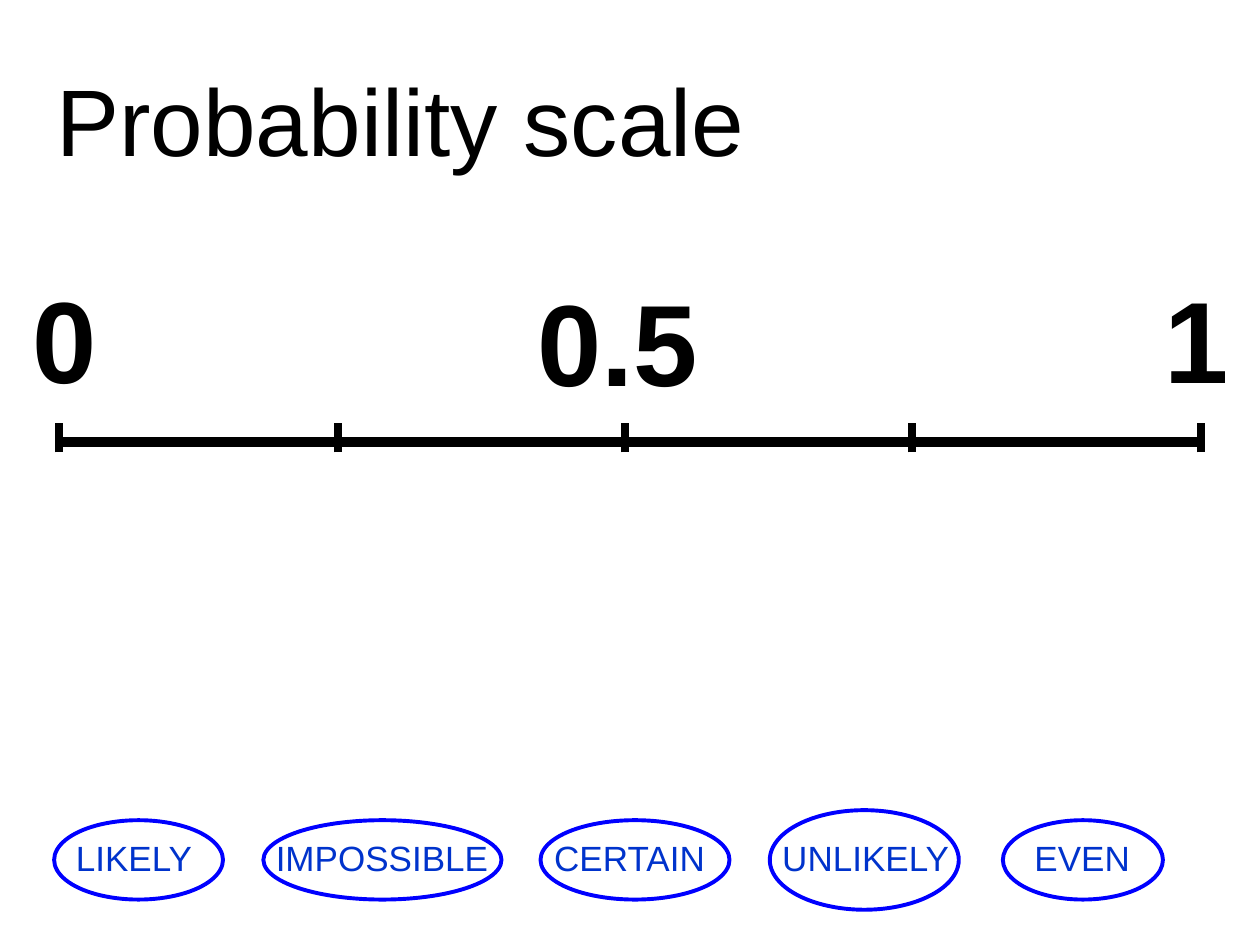
import pptx
import pptx.util
import pptx.dml.color
import pptx.enum.shapes
import pptx.enum.text
import pptx.oxml.ns
from lxml import etree

COLOURS = {"ink": "000000", "word": "0033CC", "ring": "0000FF"}
COLUMNS, ROWS = 100, 75


class SlideBuilder:
    font = "Arial"

    def __init__(self, presentation):
        self.slide = presentation.slides.add_slide(presentation.slide_layouts[6])
        self.column = presentation.slide_width / COLUMNS
        self.row = presentation.slide_height / ROWS

    def x(self, columns):
        return pptx.util.Emu(round(columns * self.column))

    def y(self, rows):
        return pptx.util.Emu(round(rows * self.row))

    def box(self, left, top, width, height):
        return self.x(left), self.y(top), self.x(width), self.y(height)

    def colour(self, name):
        return pptx.dml.color.RGBColor.from_string(COLOURS[name])

    def text(self, words, left, top, width, height, size, colour="ink", bold=False):
        shape = self.slide.shapes.add_textbox(*self.box(left, top, width, height))
        frame = shape.text_frame
        frame.word_wrap = True
        frame.auto_size = pptx.enum.text.MSO_AUTO_SIZE.SHAPE_TO_FIT_TEXT
        run = frame.paragraphs[0].add_run()
        run.text = words
        run.font.name = self.font
        run.font.size = pptx.util.Pt(size)
        run.font.bold = bold
        run.font.color.rgb = self.colour(colour)

    def line(self, x1, y1, x2, y2, weight):
        connector = self.slide.shapes.add_connector(
            pptx.enum.shapes.MSO_CONNECTOR.STRAIGHT,
            self.x(x1), self.y(y1), self.x(x2), self.y(y2))
        connector.line.color.rgb = self.colour("ink")
        connector.line.width = pptx.util.Pt(weight)
        properties = connector.element.find(pptx.oxml.ns.qn("p:spPr"))
        etree.SubElement(properties, pptx.oxml.ns.qn("a:effectLst"))

    def ring(self, left, middle, width, height):
        shape = self.slide.shapes.add_shape(
            pptx.enum.shapes.MSO_SHAPE.OVAL,
            *self.box(left, middle - height / 2, width, height))
        shape.shadow.inherit = False
        shape.fill.background()
        shape.line.color.rgb = self.colour("ring")
        shape.line.width = pptx.util.Pt(2.25)


def main():
    presentation = pptx.Presentation()
    presentation.slide_width = pptx.util.Inches(10)
    presentation.slide_height = pptx.util.Inches(7.5)
    builder = SlideBuilder(presentation)

    builder.text("Probability scale", 3.5, 4.4, 92.9, 10, 54)

    ticks = [4.7, 26.8, 49.6, 72.4, 95.3]
    builder.line(ticks[0], 35.1, ticks[-1], 35.1, 6)
    for tick in ticks:
        builder.line(tick, 35.9, tick, 33.6, 4.5)

    for label, left, top, width in [
        ("0", 1.6, 20.8, 8.6),
        ("0.5", 41.7, 21, 15),
        ("1", 91.4, 20.8, 8.6),
    ]:
        builder.text(label, left, top, width, 12, 66, bold=True)

    for word, text_left, ring_left, ring_width, ring_height in [
        ("LIKELY", 5.04, 4.3, 13.4, 6.3),
        ("IMPOSSIBLE", 20.9, 20.9, 18.9, 6.3),
        ("CERTAIN", 43, 42.9, 15, 6.3),
        ("UNLIKELY", 61.1, 61.1, 15, 7.9),
        ("EVEN", 81.12, 79.6, 12.7, 6.3),
    ]:
        builder.text(word, text_left, 65.9, min(21.2, COLUMNS - text_left), 4.3, 20, "word")
        builder.ring(ring_left, 68.25, ring_width, ring_height)

    presentation.save("out.pptx")


if __name__ == "__main__":
    main()
